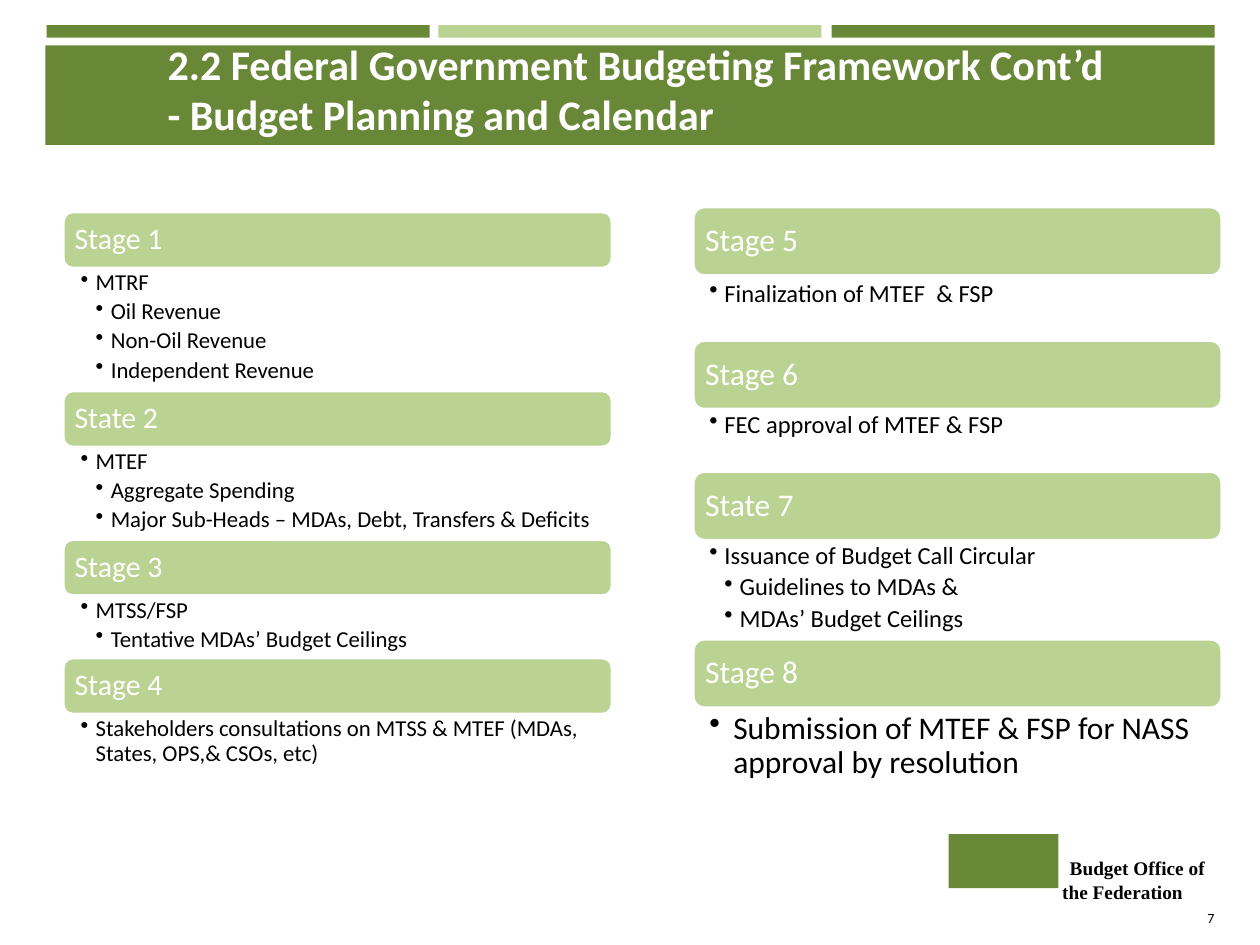
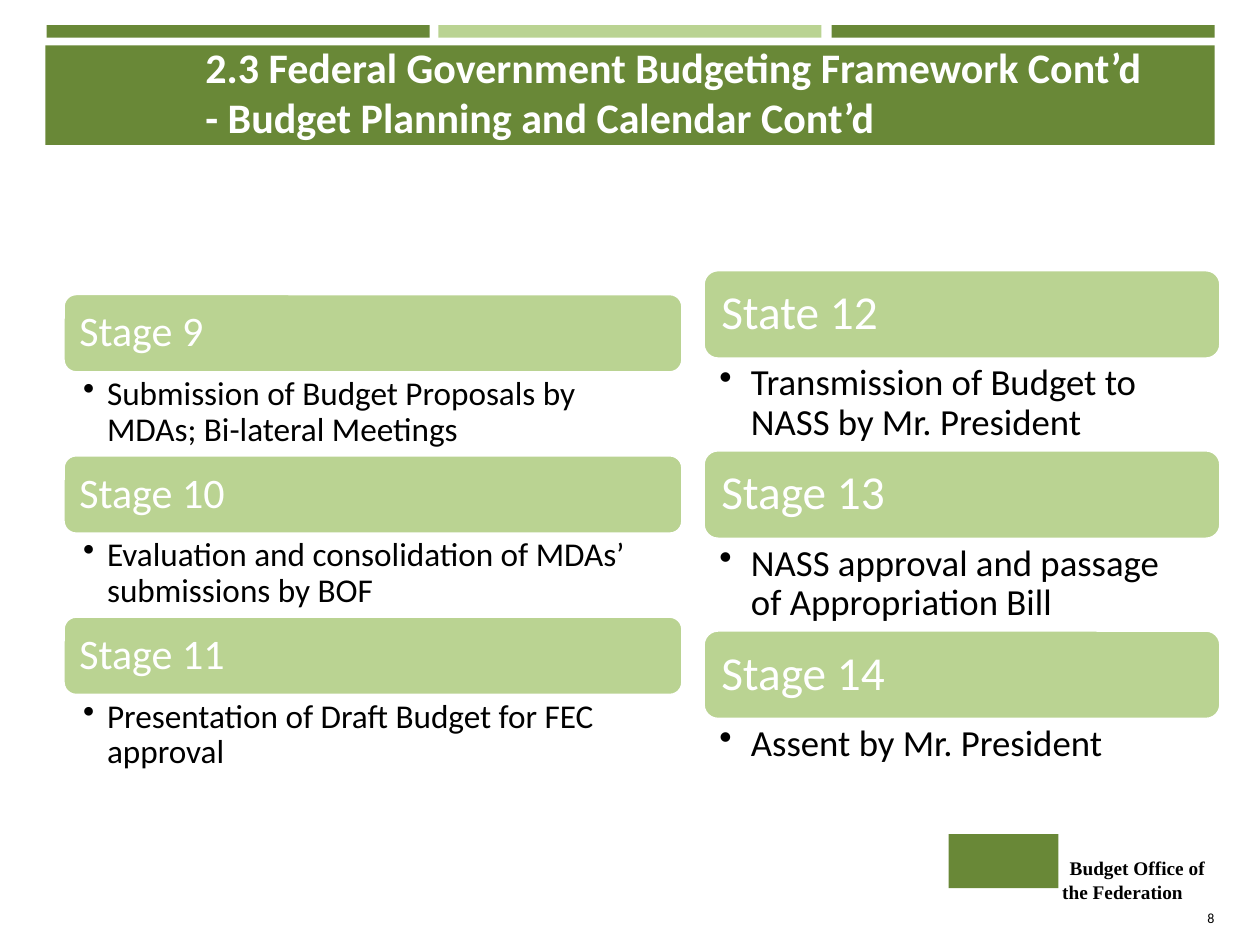
from dataclasses import dataclass

from lxml import etree
from pptx import Presentation
from pptx.dml.color import RGBColor
from pptx.enum.shapes import MSO_SHAPE
from pptx.enum.text import MSO_ANCHOR, MSO_AUTO_SIZE, PP_ALIGN
from pptx.oxml.ns import qn
from pptx.util import Emu, Pt

RECTANGLE, ROUNDED = MSO_SHAPE.RECTANGLE, MSO_SHAPE.ROUNDED_RECTANGLE
TOP, MIDDLE = MSO_ANCHOR.TOP, MSO_ANCHOR.MIDDLE
LEFT, RIGHT = PP_ALIGN.LEFT, PP_ALIGN.RIGHT
EMU_PER_PX = 9144  # the page is a grid of 1000 by 750 px
TITLE_ONLY = 5


@dataclass(frozen=True)
class Theme:
    dark: RGBColor = RGBColor(0x69, 0x88, 0x37)
    light: RGBColor = RGBColor(0xBA, 0xD3, 0x92)
    white: RGBColor = RGBColor(0xFF, 0xFF, 0xFF)
    black: RGBColor = RGBColor(0, 0, 0)
    font: str = "Calibri"
    office_font: str = "Times New Roman"
    title_size: int = 24
    office_size: int = 11
    number_size: int = 8
    line_spacing: float = 0.9
    bar_outline: int = 2


THEME = Theme()


@dataclass(frozen=True)
class Area:
    left: int
    top: int
    width: int
    height: int


@dataclass(frozen=True)
class BodyStyle:
    size: int
    hang: int
    left: int
    right: int
    top: int


@dataclass(frozen=True)
class Stage:
    """Lines that start with a tab sit on the second bullet level."""
    heading: str
    lines: tuple[str, ...]
    body_height: int
    gap: int = 0
    style: BodyStyle | None = None


@dataclass(frozen=True)
class Column:
    left: int
    top: int
    width: int
    bar_height: int
    heading_size: int
    heading_inset: int
    style: BodyStyle
    stages: tuple[Stage, ...]


@dataclass(frozen=True)
class StagePage:
    number: int
    title_lines: tuple[str, str]
    title_area: Area
    columns: tuple[Column, ...]


BANDS = (
    (Area(36, 36, 928, 79), THEME.dark),
    (Area(37, 20, 304, 10), THEME.dark),
    (Area(348, 20, 304, 10), THEME.light),
    (Area(660, 20, 304, 10), THEME.dark),
)
EMBLEM = Area(753, 662, 87, 43)
OFFICE = Area(839, 676, 130, 47)
NUMBER = Area(914, 722, 50, 13)

PAGES = (
    StagePage(
        7,
        ("2.2 Federal Government Budgeting Framework Cont’d",
         "- Budget Planning and Calendar"),
        Area(133, 45, 800, 51),
        (
            Column(50, 168, 436, 45, 17, 7, BodyStyle(13, 12, 14, 13, 2), (
                Stage("Stage 1", ("MTRF", "\tOil Revenue", "\tNon-Oil Revenue",
                                  "\tIndependent Revenue"), 97),
                Stage("State 2", ("MTEF", "\tAggregate Spending",
                                  "\tMajor Sub-Heads – MDAs, Debt, Transfers & Deficits"), 73),
                Stage("Stage 3", ("MTSS/FSP", "\tTentative MDAs’ Budget Ceilings"), 49),
                Stage("Stage 4", ("Stakeholders consultations on MTSS & MTEF "
                                  "(MDAs, States, OPS,& CSOs, etc)",), 45),
            )),
            Column(550, 164, 420, 55, 18, 7, BodyStyle(14, 12, 13, 11, 2), (
                Stage("Stage 5", ("Finalization of MTEF  & FSP",), 49, gap=2),
                Stage("Stage 6", ("FEC approval of MTEF & FSP",), 49),
                Stage("State 7", ("Issuance of Budget Call Circular",
                                  "\tGuidelines to MDAs &",
                                  "\tMDAs’ Budget Ceilings"), 78),
                Stage("Stage 8", ("Submission of MTEF & FSP for NASS approval by resolution",),
                      61, style=BodyStyle(18, 19, 13, 14, 3)),
            )),
        ),
    ),
    StagePage(
        8,
        ("2.3 Federal Government Budgeting Framework Cont’d",
         "- Budget Planning and Calendar Cont’d"),
        Area(163, 34, 783, 78),
        (
            Column(50, 233, 492, 63, 24, 10, BodyStyle(19, 19, 16, 19, 3), (
                Stage("Stage 9", ("Submission of Budget Proposals by MDAs; "
                                  "Bi-lateral Meetings",), 65),
                Stage("Stage 10", ("Evaluation and consolidation of MDAs’ "
                                   "submissions by BOF",), 65),
                Stage("Stage 11", ("Presentation of Draft Budget for FEC approval",), 65),
            )),
            Column(558, 214, 411, 71, 27, 11, BodyStyle(21, 25, 13, 21, 4), (
                Stage("State 12", ("Transmission of Budget to NASS by Mr. President",), 72),
                Stage("Stage 13", ("NASS approval and passage of Appropriation Bill",), 72),
                Stage("Stage 14", ("Assent by Mr. President",), 49),
            )),
        ),
    ),
)


def px(length: int) -> Emu:
    return Emu(length * EMU_PER_PX)


def place(area: Area) -> tuple[Emu, Emu, Emu, Emu]:
    return px(area.left), px(area.top), px(area.width), px(area.height)


def set_frame(frame, anchor, left: int = 0, top: int = 0, right: int = 0) -> None:
    frame.word_wrap = True
    frame.auto_size = MSO_AUTO_SIZE.NONE
    frame.vertical_anchor = anchor
    frame.margin_left, frame.margin_right = px(left), px(right)
    frame.margin_top = frame.margin_bottom = px(top)


def set_font(para, size: int, color: RGBColor, name: str = THEME.font,
             bold: bool = False) -> None:
    para.font.name, para.font.size, para.font.bold = name, Pt(size), bold
    para.font.color.rgb = color


def set_indent(para, margin: int, first_line: int) -> None:
    properties = para._p.get_or_add_pPr()
    properties.set("marL", str(px(margin)))
    properties.set("indent", str(px(first_line)))


def add_block(page, area: Area, color: RGBColor, preset=RECTANGLE):
    block = page.shapes.add_shape(preset, *place(area))
    block.shadow.inherit = False
    block.fill.solid()
    block.fill.fore_color.rgb = color
    block.line.fill.background()
    return block


def add_text(page, area: Area, text: str, anchor, inset: int = 0):
    box = page.shapes.add_textbox(*place(area))
    set_frame(box.text_frame, anchor, inset, inset, inset)
    para = box.text_frame.paragraphs[0]
    para.text = text
    return para


def add_bar(page, area: Area, column: Column, heading: str) -> None:
    bar = add_block(page, area, THEME.light, ROUNDED)
    bar.line.color.rgb = THEME.white
    bar.line.width = Pt(THEME.bar_outline)
    inset = column.heading_inset
    set_frame(bar.text_frame, MIDDLE, inset, inset, inset)
    para = bar.text_frame.paragraphs[0]
    para.text = heading
    para.alignment = LEFT
    para.line_spacing = THEME.line_spacing
    set_font(para, column.heading_size, THEME.white)


def add_bullets(page, area: Area, lines: tuple[str, ...], style: BodyStyle) -> None:
    frame = page.shapes.add_textbox(*place(area)).text_frame
    set_frame(frame, TOP, style.left, style.top, style.right)
    for index, line in enumerate(lines):
        para = frame.add_paragraph() if index else frame.paragraphs[0]
        para.text = line.lstrip("\t")
        para.level = 2 if line.startswith("\t") else 1
        set_indent(para, style.hang * para.level, -style.hang)
        para.line_spacing = THEME.line_spacing
        para.space_after = Pt(style.size * 0.2)
        etree.SubElement(para._p.get_or_add_pPr(), qn("a:buChar")).set("char", "•")
        set_font(para, style.size, THEME.black)


def add_column(page, column: Column) -> None:
    """Stack each stage's bar and bullets directly under the one before."""
    top = column.top
    for stage in column.stages:
        bar = Area(column.left, top, column.width, column.bar_height)
        add_bar(page, bar, column, stage.heading)
        top += column.bar_height + stage.gap
        body = Area(column.left, top, column.width, stage.body_height)
        add_bullets(page, body, stage.lines, stage.style or column.style)
        top += stage.body_height


def add_frame(page, number: int) -> None:
    """Draw the bands, the office name and the page number."""
    for area, color in BANDS:
        add_block(page, area, color)
    add_block(page, EMBLEM, THEME.dark)
    office = add_text(page, OFFICE, "Budget Office of the Federation", TOP, inset=4)
    set_indent(office, 0, 6)
    set_font(office, THEME.office_size, THEME.black, THEME.office_font, bold=True)
    page_number = add_text(page, NUMBER, str(number), MIDDLE)
    page_number.alignment = RIGHT
    set_font(page_number, THEME.number_size, THEME.black)


def set_title(page, area: Area, lines: tuple[str, str]) -> None:
    """Fill the title placeholder and bring it in front of the band."""
    title = page.shapes.title
    title.left, title.top, title.width, title.height = place(area)
    set_frame(title.text_frame, MIDDLE)
    para = title.text_frame.paragraphs[0]
    para.alignment = LEFT
    para.add_run().text = lines[0]
    para.add_line_break()
    para.add_run().text = lines[1]
    set_font(para, THEME.title_size, THEME.white, bold=True)
    title.element.getparent().append(title.element)


def main() -> None:
    deck = Presentation()
    deck.slide_width, deck.slide_height = px(1000), px(750)
    for content in PAGES:
        page = deck.slides.add_slide(deck.slide_layouts[TITLE_ONLY])
        add_frame(page, content.number)
        for column in content.columns:
            add_column(page, column)
        set_title(page, content.title_area, content.title_lines)
    deck.save("out.pptx")


if __name__ == "__main__":
    main()
